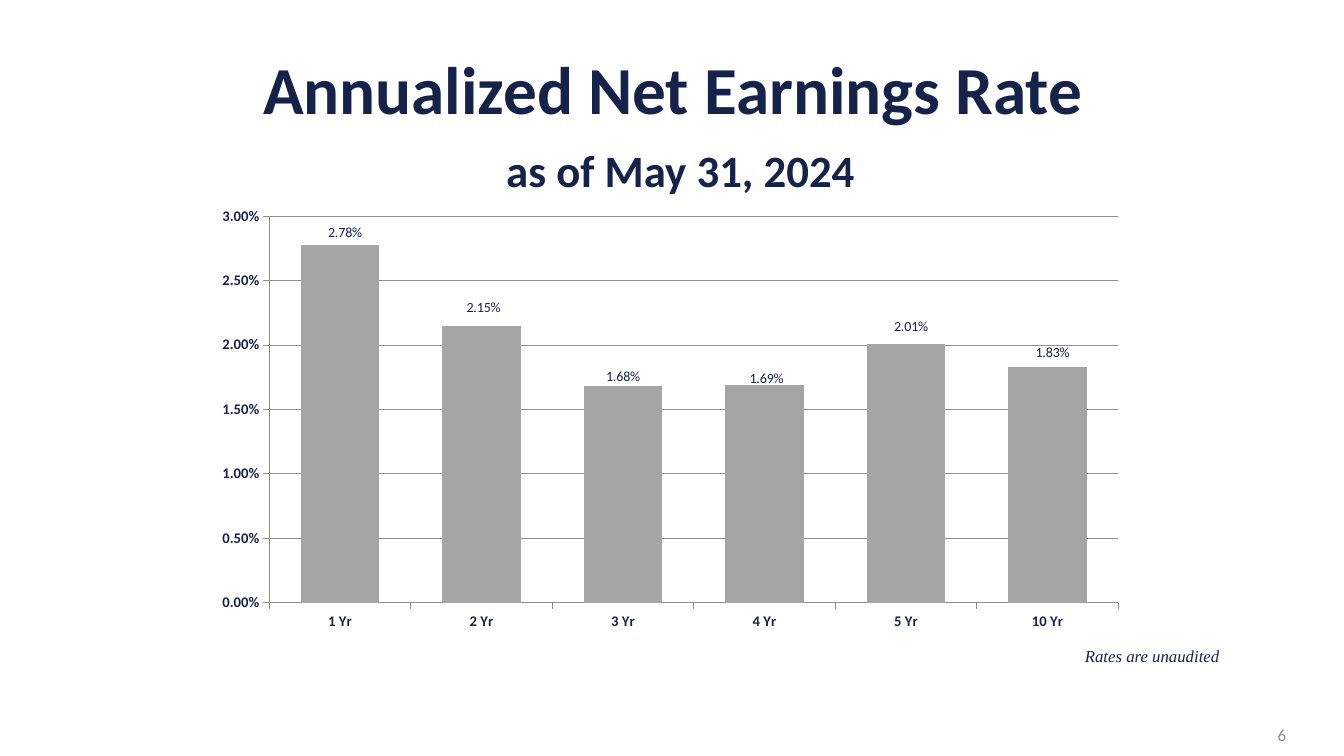
"""Build the annualized net earnings rate slide with its column chart."""
from dataclasses import dataclass

from lxml import etree
from pptx import Presentation
from pptx import util as u
from pptx.chart import data as chart_data
from pptx.dml.color import RGBColor
from pptx.enum import chart as ch, text as t
from pptx.oxml import ns

COLORS = {"navy": "15234A", "bar": "A5A5A5", "line": "8C8D96", "number": "8C8D96"}
CHART_W, CHART_H = 912, 464
PLOT_AREA = {"x": 0.065, "y": 0.031, "w": 0.931, "h": 0.833}


@dataclass
class Rate:
    period: str
    value: float
    label_dx: int
    label_dy: int


@dataclass
class Note:
    words: str
    box: tuple[int, int, int, int]
    font: str
    color: str
    align: t.PP_ALIGN
    anchor: t.MSO_ANCHOR
    italic: bool = False


RATES = [
    Rate("1 Yr", 0.0278, 5, 0),
    Rate("2 Yr", 0.0215, 2, -6),
    Rate("3 Yr", 0.0168, 0, 2),
    Rate("4 Yr", 0.0169, 2, 5),
    Rate("5 Yr", 0.0201, 5, -5),
    Rate("10 Yr", 0.0183, 5, -2),
]
NOTES = [
    Note("6", (994, 715, 302, 40), "Calibri", "number", t.PP_ALIGN.RIGHT, t.MSO_ANCHOR.MIDDLE),
    Note("Rates are unaudited", (1075, 641, 235, 30), "Times New Roman", "navy",
         t.PP_ALIGN.LEFT, t.MSO_ANCHOR.TOP, True),
]


def px(n: int) -> u.Emu:
    return u.Emu(round(n * 914400 / 100.8))


def rgb(name: str) -> RGBColor:
    return RGBColor.from_string(COLORS[name])


def style(font, size: float, color: str, name: str = "Calibri",
          bold: bool = False, italic: bool = False) -> None:
    font.name, font.size, font.bold, font.italic = name, u.Pt(size), bold, italic
    font.color.rgb = rgb(color)


def add_run(p, words: str, size: float, color: str, **kw) -> None:
    r = p.add_run()
    r.text = words
    style(r.font, size, color, **kw)


def manual_layout(values: dict[str, float | str]):
    layout = etree.Element(ns.qn("c:layout"))
    manual = etree.SubElement(layout, ns.qn("c:manualLayout"))
    for tag, value in values.items():
        etree.SubElement(manual, ns.qn(f"c:{tag}")).set("val", str(value))
    return layout


def add_title(s) -> None:
    sp = s.shapes.title
    sp.left, sp.top, sp.width, sp.height = map(px, (68, 84, 1210, 90))
    tf = sp.text_frame
    tf.auto_size = t.MSO_AUTO_SIZE.NONE
    tf.vertical_anchor = t.MSO_ANCHOR.MIDDLE
    p = tf.paragraphs[0]
    p.alignment, p.line_spacing = t.PP_ALIGN.CENTER, 0.9
    add_run(p, "Annualized Net Earnings Rate", 48, "navy", bold=True)
    p.add_line_break()
    add_run(p, " ", 48, "navy", bold=True)
    add_run(p, "as of May 31, 2024", 32, "navy", bold=True)


def add_note(s, note: Note) -> None:
    tf = s.shapes.add_textbox(*map(px, note.box)).text_frame
    tf.word_wrap = True
    tf.vertical_anchor = note.anchor
    p = tf.paragraphs[0]
    p.alignment = note.align
    add_run(p, note.words, 12, note.color, name=note.font, italic=note.italic)


def style_axis(axis) -> None:
    axis.major_tick_mark = ch.XL_TICK_MARK.OUTSIDE
    axis.minor_tick_mark = ch.XL_TICK_MARK.NONE
    style(axis.tick_labels.font, 10.5, "navy", bold=True)
    axis.format.line.color.rgb = rgb("line")
    axis.format.line.width = u.Pt(0.75)


def add_rate_chart(s) -> None:
    data = chart_data.CategoryChartData(number_format="0.00%")
    data.categories = [rate.period for rate in RATES]
    data.add_series("Series 1", [rate.value for rate in RATES])
    chart = s.shapes.add_chart(ch.XL_CHART_TYPE.COLUMN_CLUSTERED,
                               *map(px, (210, 202, CHART_W, CHART_H)), data).chart
    chart.has_legend = chart.has_title = False
    style(chart.font, 18, "navy")

    style_axis(chart.category_axis)
    axis = chart.value_axis
    style_axis(axis)
    axis.minimum_scale, axis.maximum_scale, axis.major_unit = 0, 0.03, 0.005
    axis.tick_labels.number_format = "0.00%"
    axis.tick_labels.number_format_is_linked = False
    axis.has_major_gridlines = True
    axis.major_gridlines.format.line.color.rgb = rgb("line")
    axis.major_gridlines.format.line.width = u.Pt(0.75)

    plot = chart.plots[0]
    plot.gap_width, plot.vary_by_categories = 80, False
    series = plot.series[0]
    series.format.fill.solid()
    series.format.fill.fore_color.rgb = rgb("bar")
    labels = series.data_labels
    labels.show_value = True
    labels.number_format, labels.number_format_is_linked = "0.00%", False
    labels.position = ch.XL_LABEL_POSITION.OUTSIDE_END
    style(labels.font, 10, "navy")
    for i in range(len(RATES)):
        label = series.points[i].data_label
        label.position = ch.XL_LABEL_POSITION.OUTSIDE_END
        style(label.font, 10, "navy")
    for rate, label in zip(RATES, series._element.iter(ns.qn("c:dLbl"))):
        label.insert(1, manual_layout({"x": round(rate.label_dx / CHART_W, 4),
                                       "y": round(rate.label_dy / CHART_H, 4)}))

    area = chart._chartSpace.find(".//" + ns.qn("c:plotArea"))
    for old in area.findall(ns.qn("c:layout")):
        area.remove(old)
    area.insert(0, manual_layout({"layoutTarget": "inner", "xMode": "edge",
                                  "yMode": "edge", **PLOT_AREA}))


def main() -> None:
    prs = Presentation()
    prs.slide_width, prs.slide_height = px(1344), px(756)
    s = prs.slides.add_slide(prs.slide_layouts[5])
    add_title(s)
    add_rate_chart(s)
    for note in NOTES:
        add_note(s, note)
    prs.save("out.pptx")


if __name__ == "__main__":
    main()
